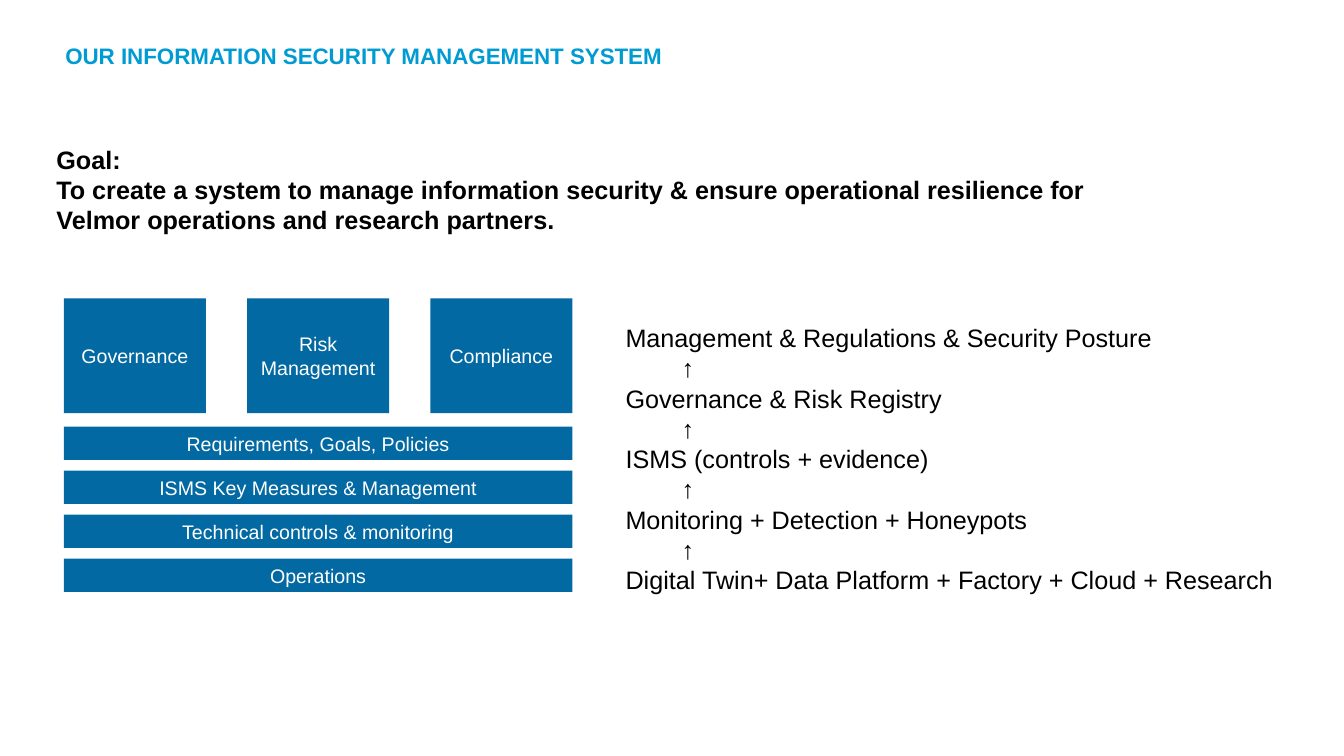
from pptx import Presentation
from pptx.dml.color import RGBColor
from pptx.enum.shapes import MSO_SHAPE
from pptx.enum.text import MSO_ANCHOR, PP_ALIGN
from pptx.util import Pt

PILLARS = ["Governance", "Risk Management", "Compliance"]
LAYERS = [
    "Requirements, Goals, Policies",
    "ISMS Key Measures & Management",
    "Technical controls & monitoring",
    "Operations",
]
REPORTING_CHAIN = [
    "Management & Regulations & Security Posture",
    "Governance & Risk Registry",
    "ISMS (controls + evidence)",
    "Monitoring + Detection + Honeypots",
    "Digital Twin+ Data Platform + Factory + Cloud + Research",
]
GOAL = [
    "Goal:",
    "To create a system to manage information security & ensure operational "
    "resilience for Velmor operations and research partners.",
]


def color(value):
    return RGBColor.from_string(value)


def write(paragraph, text, size=18, ink="000000", bold=False,
          align=PP_ALIGN.LEFT, spacing=1.0, indent=0):
    properties = paragraph._p.get_or_add_pPr()
    properties.set("marL", str(Pt(indent)))
    properties.set("indent", "0")
    paragraph.alignment = align
    paragraph.line_spacing = spacing
    run = paragraph.add_run()
    run.text = text
    run.font.name = "Arial"
    run.font.size = Pt(size)
    run.font.bold = bold
    run.font.color.rgb = color(ink)


class SlideBuilder:
    accent = "009BD2"
    block_fill = "0369A3"
    block_ink = "FFFFFF"

    def __init__(self, slide):
        self.slide = slide

    def text(self, left, top, width, height):
        box = self.slide.shapes.add_textbox(Pt(left), Pt(top), Pt(width), Pt(height))
        box.text_frame.word_wrap = True
        return box.text_frame

    def block(self, label, left, top, width, height):
        block = self.slide.shapes.add_shape(
            MSO_SHAPE.RECTANGLE, Pt(left), Pt(top), Pt(width), Pt(height))
        block.shadow.inherit = False
        block.fill.solid()
        block.fill.fore_color.rgb = color(self.block_fill)
        block.line.fill.background()
        frame = block.text_frame
        frame.word_wrap = True
        frame.vertical_anchor = MSO_ANCHOR.MIDDLE
        write(frame.paragraphs[0], label, size=14, ink=self.block_ink,
              align=PP_ALIGN.CENTER)

    def heading(self, text, left, top, width, height):
        frame = self.text(left, top, width, height)
        write(frame.paragraphs[0], text, size=16, ink=self.accent, bold=True,
              spacing=0.9)

    def statement(self, lines, left, top, width, height):
        frame = self.text(left, top, width, height)
        write(frame.paragraphs[0], lines[0], bold=True)
        for line in lines[1:]:
            write(frame.add_paragraph(), line, bold=True)

    def upward_chain(self, steps, left, top, width, height):
        """List the steps with an indented up arrow between neighbours."""
        frame = self.text(left, top, width, height)
        write(frame.paragraphs[0], steps[0])
        for step in steps[1:]:
            write(frame.add_paragraph(), "↑", indent=40)
            write(frame.add_paragraph(), step)


def main():
    presentation = Presentation()
    presentation.slide_width = Pt(960.5)
    presentation.slide_height = Pt(540)
    builder = SlideBuilder(
        presentation.slides.add_slide(presentation.slide_layouts[6]))

    builder.heading("OUR INFORMATION SECURITY MANAGEMENT SYSTEM", 39.6, 28.8, 485, 83)
    builder.statement(GOAL, 33.2, 99.5, 799, 73)

    model_left, model_width = 45.6, 363.5
    pillar_width = 101.5
    pillar_step = (model_width - pillar_width) / (len(PILLARS) - 1)
    for column, pillar in enumerate(PILLARS):
        builder.block(pillar, model_left + column * pillar_step, 213.2,
                      pillar_width, 82)
    for row, layer in enumerate(LAYERS):
        builder.block(layer, model_left, 304.8 + row * 31.4, model_width, 23.8)

    builder.upward_chain(REPORTING_CHAIN, 440, 226.8, 484.6, 203.8)
    presentation.save("out.pptx")


if __name__ == "__main__":
    main()
